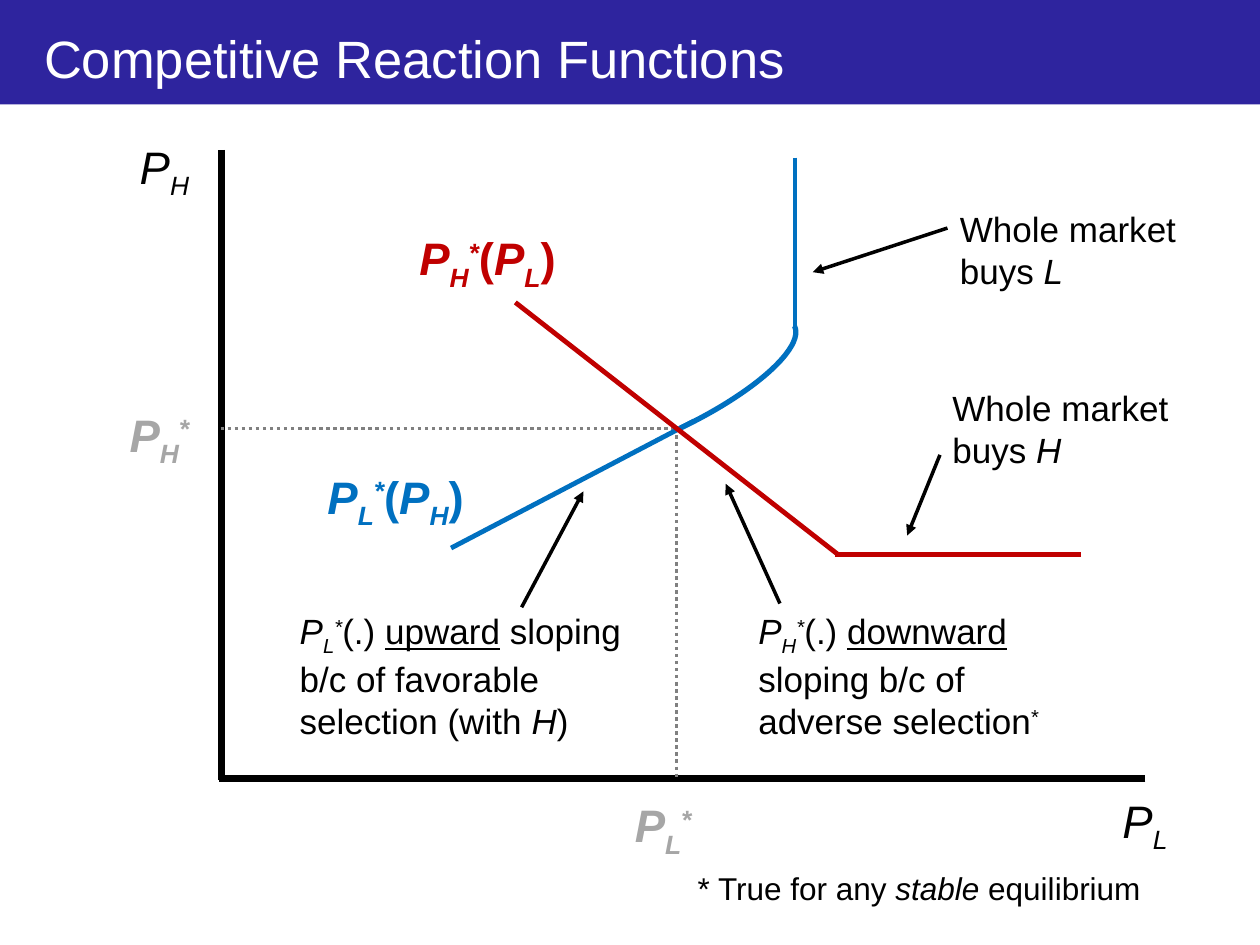
from lxml import etree
from pptx import Presentation
from pptx.dml.color import RGBColor
from pptx.enum import dml, shapes, text
from pptx.oxml.ns import qn
from pptx.util import Inches, Pt

THEME = {
    "font": "Arial",
    "bar": "2E249E", "white": "FFFFFF", "ink": "000000",
    "high": "C00000", "low": "0070C0", "guide": "808080", "muted": "A6A6A6",
    "title": 30, "symbol": 26, "body": 20, "footnote": 18,
    "axis_line": 4, "curve_line": 2.75, "arc_line": 3, "thin_line": 2,
}

# Spans are (text, marks): i italic, b bold, u underline, - subscript, + superscript


def price(firm, star=False, bold=""):
    spans = [("P", "i" + bold), (firm, "i-" + bold)]
    return spans + [("*", "i+" + bold)] if star else spans


def reaction(firm, rival):
    return price(firm, True, "b") + [("(", "b")] + price(rival, bold="b") + [(")", "b")]


TITLE = "Competitive Reaction Functions"
CROSS_X, CROSS_Y = 5.37, 3.4
ORIGIN_X, ORIGIN_Y = 1.76, 6.18
KINK_X = 6.31
FLOOR_Y = 4.4

AXES = [((ORIGIN_X, 1.19), (ORIGIN_X, 6.19)), ((9.09, ORIGIN_Y), (1.74, ORIGIN_Y))]
GUIDES = [((1.75, CROSS_Y), (CROSS_X, CROSS_Y)), ((CROSS_X, CROSS_Y), (CROSS_X, ORIGIN_Y))]
LOW_LINES = [((5.51, 3.34), (3.58, 4.35)), ((KINK_X, 1.25), (KINK_X, 2.68))]
LOW_ARC = (4.09, 2.75, 2.33, 0.68)
LOW_ARC_TURN = 154.5
HIGH_LINES = [((6.65, FLOOR_Y), (4.09, 2.4)), ((8.58, FLOOR_Y), (6.63, FLOOR_Y))]
ARROWS = [
    ((6.19, 4.79), (5.76, 3.84)),
    ((4.14, 4.82), (4.63, 3.9)),
    ((7.52, 1.81), (6.45, 2.16)),
    ((7.46, 3.61), (7.2, 4.25)),
]

# place, spans, format
LABELS = [
    ((1.01, 1.02, 0.77, 0.82), price("H"), {"spacing": 1.07}),
    ((8.81, 6.21, 0.77, 0.82), price("L"), {"spacing": 1.07}),
    ((0.93, 3.18, 0.83, 0.54), price("H", True, "b"), {"color": "muted"}),
    ((4.94, 6.28, 0.83, 0.54), price("L", True, "b"), {"color": "muted"}),
    ((3.23, 1.78, 1.67, 0.54), reaction("H", "L"), {"color": "high"}),
    ((2.5, 3.67, 1.67, 0.54), reaction("L", "H"), {"color": "low"}),
    ((5.92, 4.79, 2.9, 1.11),
     price("H", True) + [("(.) ", ""), ("downward", "u"),
                         (" sloping b/c of adverse selection", ""), ("*", "+")],
     {"size": "body"}),
    ((2.28, 4.79, 3.1, 1.11),
     price("L", True) + [("(.) ", ""), ("upward", "u"),
                         (" sloping b/c of favorable selection (with ", ""),
                         ("H", "i"), (")", "")],
     {"size": "body"}),
    ((7.52, 1.6, 2.13, 0.77), [("Whole market buys ", ""), ("L", "i")], {"size": "body"}),
    ((7.46, 3.02, 1.95, 0.77), [("Whole market buys ", ""), ("H", "i")], {"size": "body"}),
    ((4.94, 6.85, 4.21, 0.4),
     [("* True for any ", ""), ("stable", "i"), (" equilibrium", "")],
     {"size": "footnote", "align": text.PP_ALIGN.RIGHT}),
]


def rgb(name):
    return RGBColor.from_string(THEME[name])


def inches(values):
    return [Inches(value) for value in values]


def write(frame, spans, size="symbol", color="ink", align=text.PP_ALIGN.LEFT,
          anchor=text.MSO_ANCHOR.TOP, spacing=None):
    frame.word_wrap = True
    frame.vertical_anchor = anchor
    para = frame.paragraphs[0]
    para.alignment = align
    if spacing:
        para.line_spacing = spacing
        para.space_after = Pt(8)
    for words, marks in spans:
        span = para.add_run()
        span.text = words
        font = span.font
        font.name, font.size = THEME["font"], Pt(THEME[size])
        font.color.rgb = rgb(color)
        font.bold, font.italic, font.underline = ("b" in marks, "i" in marks, "u" in marks)
        if "-" in marks:
            font._element.set("baseline", "-25000")
        elif "+" in marks:
            font._element.set("baseline", "30000")


def draw_lines(parent, segments, color, width, dotted=False, arrow=False):
    for start, end in segments:
        line = parent.add_connector(shapes.MSO_CONNECTOR.STRAIGHT, *inches(start + end))
        line.line.color.rgb = rgb(color)
        line.line.width = Pt(THEME[width])
        if dotted:
            line.line.dash_style = dml.MSO_LINE.ROUND_DOT
        if arrow:
            etree.SubElement(line.line._get_or_add_ln(), qn("a:tailEnd"), type="triangle")
        etree.SubElement(line._element.spPr, qn("a:effectLst"))


def draw_arc(parent, place, turn, color):
    arc = parent.add_shape(shapes.MSO_SHAPE.ARC, *inches(place))
    arc.shadow.inherit = False
    arc.fill.background()
    arc.line.color.rgb = rgb(color)
    arc.line.width = Pt(THEME["arc_line"])
    arc.rotation = turn
    arc._element.spPr.xfrm.set("flipH", "1")


def add_header(page):
    bar = page.shapes.add_shape(shapes.MSO_SHAPE.RECTANGLE, *inches((0, 0, 10, 0.83)))
    bar.shadow.inherit = False
    bar.fill.solid()
    bar.fill.fore_color.rgb = rgb("bar")
    bar.line.fill.background()
    title = page.shapes.title
    title._element.addprevious(bar._element)  # keeps the bar behind the title
    title.left, title.top, title.width, title.height = inches((0.25, 0.17, 9.58, 0.58))
    write(title.text_frame, [(TITLE, "")], size="title", color="white",
          anchor=text.MSO_ANCHOR.MIDDLE)


def main():
    deck = Presentation()
    deck.slide_width, deck.slide_height = inches((10, 7.5))
    page = deck.slides.add_slide(deck.slide_layouts[5])
    add_header(page)

    draw_lines(page.shapes, AXES, "ink", "axis_line")
    draw_lines(page.shapes, GUIDES, "guide", "thin_line", dotted=True)
    low_curve = page.shapes.add_group_shape().shapes
    draw_lines(low_curve, LOW_LINES, "low", "curve_line")
    draw_arc(low_curve, LOW_ARC, LOW_ARC_TURN, "low")
    high_curve = page.shapes.add_group_shape().shapes
    draw_lines(high_curve, HIGH_LINES, "high", "curve_line")
    draw_lines(page.shapes, ARROWS, "ink", "thin_line", arrow=True)

    for place, spans, style in LABELS:
        box = page.shapes.add_textbox(*inches(place))
        write(box.text_frame, spans, **style)

    deck.save("out.pptx")


if __name__ == "__main__":
    main()
